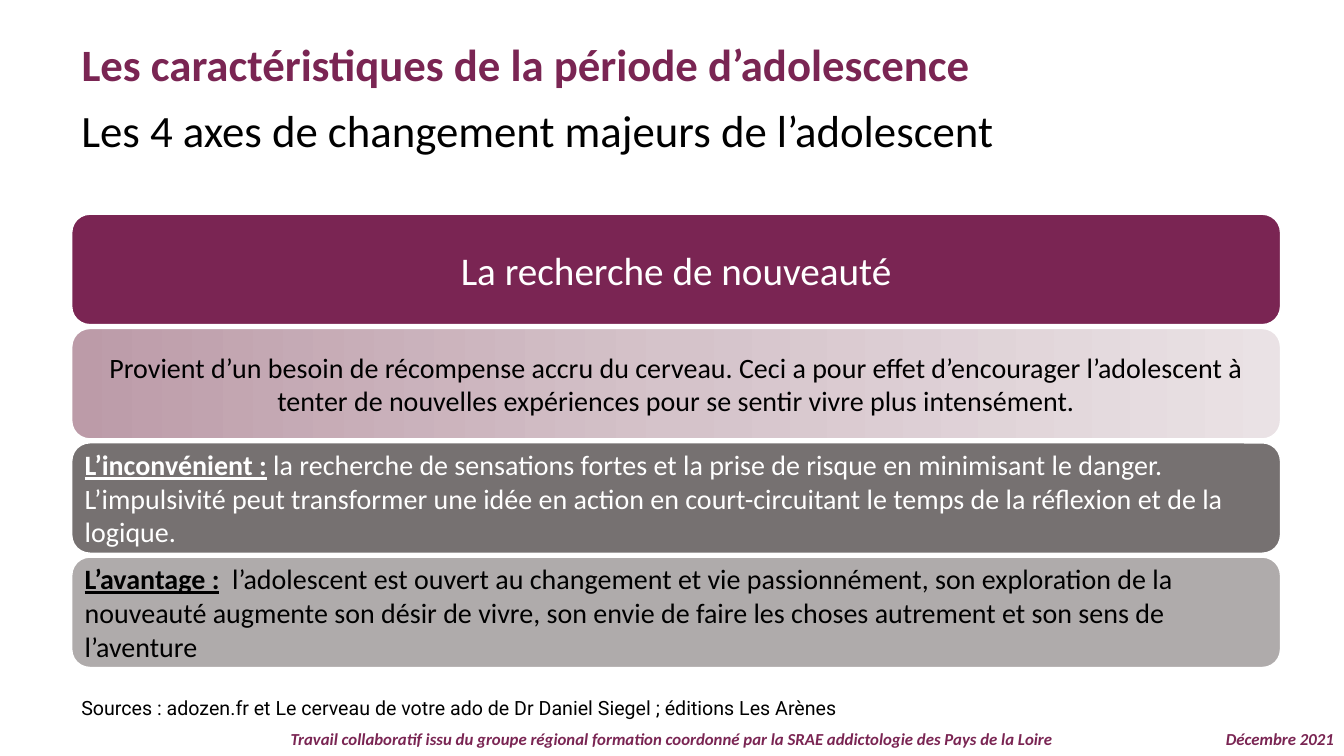
import copy

import pptx
import pptx.dml.color
import pptx.enum.shapes
import pptx.enum.text
import pptx.oxml.ns
import pptx.util
from pptx.util import Cm

PLUM, WHITE, BLACK = "7A2553", "FFFFFF", "000000"
ALIGN = pptx.enum.text.PP_ALIGN
ANCHOR = pptx.enum.text.MSO_ANCHOR
LEFT, CARD_WIDTH, CARD_HEIGHT, CARD_STEP = 1.8, 30.48, 2.8, 2.88
CARDS_TOP = 5.39

CARDS = [
    ("7A2553", WHITE, 28, 0.3, ALIGN.CENTER, "", "La recherche de nouveauté"),
    (("BC9BA8", "D5C3CA", "EAE2E5"), BLACK, 20, 0.2, ALIGN.CENTER, "",
     "Provient d’un besoin de récompense accru du cerveau. Ceci a pour effet d’encourager "
     "l’adolescent à tenter de nouvelles expériences pour se sentir vivre plus intensément."),
    ("767171", WHITE, 20, 0.2, ALIGN.LEFT, "L’inconvénient :",
     " la recherche de sensations fortes et la prise de risque en minimisant le danger. "
     "L’impulsivité peut transformer une idée en action en court-circuitant le temps de la "
     "réflexion et de la logique."),
    ("AFABAB", BLACK, 20, 0.2, ALIGN.LEFT, "L’avantage :",
     "  l’adolescent est ouvert au changement et vie passionnément, son exploration de la "
     "nouveauté augmente son désir de vivre, son envie de faire les choses autrement et son "
     "sens de l’aventure"),
]


def color(value):
    """Turn a hex string into a colour."""
    return pptx.dml.color.RGBColor.from_string(value)


def add_span(para, text, size, ink, font="Calibri", bold=False, italic=False, underline=False):
    """Append one formatted run to a paragraph."""
    span = para.add_run()
    span.text = text
    span.font.name = font
    span.font.size = pptx.util.Pt(size)
    span.font.color.rgb = color(ink)
    span.font.bold = bold
    span.font.italic = italic
    span.font.underline = underline


def first_para(shape, align=ALIGN.LEFT, anchor=ANCHOR.TOP, spacing=1.0):
    """Prepare the text frame of a shape and return its first paragraph."""
    frame = shape.text_frame
    frame.word_wrap = True
    frame.auto_size = pptx.enum.text.MSO_AUTO_SIZE.NONE
    frame.vertical_anchor = anchor
    para = frame.paragraphs[0]
    para.alignment = align
    para.line_spacing = spacing
    return para


def add_text(page, box, text, size, ink, align=ALIGN.LEFT, anchor=ANCHOR.TOP, spacing=1.0, **style):
    """Place a text box holding one run."""
    shape = page.shapes.add_textbox(*map(Cm, box))
    add_span(first_para(shape, align, anchor, spacing), text, size, ink, **style)


def add_heading(page, box):
    """Fill the title placeholder and put the subtitle below it."""
    left, top, width, height = box
    title = page.shapes.title
    title.left, title.top, title.width, title.height = map(Cm, (left, top, 25.76, 1.62))
    add_span(first_para(title), "Les caractéristiques de la période d’adolescence", 32, PLUM, bold=True)
    add_text(page, (left, top + 1.62, width, height - 1.62),
             "Les 4 axes de changement majeurs de l’adolescent", 32, BLACK,
             anchor=ANCHOR.MIDDLE, spacing=0.9)


def paint(shape, paint_value):
    """Fill a shape with one colour or an even three-stop gradient."""
    if isinstance(paint_value, str):
        shape.fill.solid()
        shape.fill.fore_color.rgb = color(paint_value)
        return
    shape.fill.gradient()
    shape.fill.gradient_angle = 0
    stop_list = shape.fill.gradient_stops[0]._gs.getparent()
    stop_list.insert(1, copy.deepcopy(stop_list[0]))
    for index, (stop, value) in enumerate(zip(shape.fill.gradient_stops, paint_value)):
        stop.position = index / 2
        stop.color.rgb = color(value)


def add_card(page, box, card):
    """Draw one rounded card with an optional underlined label."""
    fill, ink, size, inset, align, label, text = card
    shape = page.shapes.add_shape(pptx.enum.shapes.MSO_SHAPE.ROUNDED_RECTANGLE, *map(Cm, box))
    shape.shadow.inherit = False
    paint(shape, fill)
    shape.line.color.rgb = color(WHITE)
    shape.line.width = pptx.util.Pt(1.5)
    frame = shape.text_frame
    frame.margin_left = frame.margin_right = frame.margin_top = frame.margin_bottom = Cm(inset)
    para = first_para(shape, align, ANCHOR.MIDDLE)
    if label:
        add_span(para, label, size, ink, bold=True, underline=True)
    add_span(para, text, size, ink)


def add_footer(page, box):
    """Write the centred credit and the date at the right edge."""
    left, top, width, height = box
    style = dict(spacing=0.9, bold=True, italic=True)
    add_text(page, box, "Travail collaboratif issu du groupe régional formation coordonné par la "
             "SRAE addictologie des Pays de la Loire", 12, PLUM, align=ALIGN.CENTER, **style)
    add_text(page, (left + width - 3.67, top, 3.67, height), "Décembre 2021", 12, PLUM,
             align=ALIGN.RIGHT, **style)


def main():
    """Build and save the deck."""
    deck = pptx.Presentation()
    deck.slide_width, deck.slide_height = Cm(33.87), Cm(19.05)
    page = deck.slides.add_slide(deck.slide_layouts[5])
    add_footer(page, (0, 18.29, 33.87, 0.76))
    add_heading(page, (LEFT, 0.79, 28.8, 3.5))
    for index, card in enumerate(CARDS):
        add_card(page, (LEFT, CARDS_TOP + index * CARD_STEP, CARD_WIDTH, CARD_HEIGHT), card)
    add_text(page, (LEFT, 17.37, 28.55, 0.86),
             "Sources : adozen.fr et Le cerveau de votre ado de Dr Daniel Siegel ; éditions Les Arènes",
             14, BLACK, spacing=1.07, font="Roboto")
    deck.save("out.pptx")


if __name__ == "__main__":
    main()
